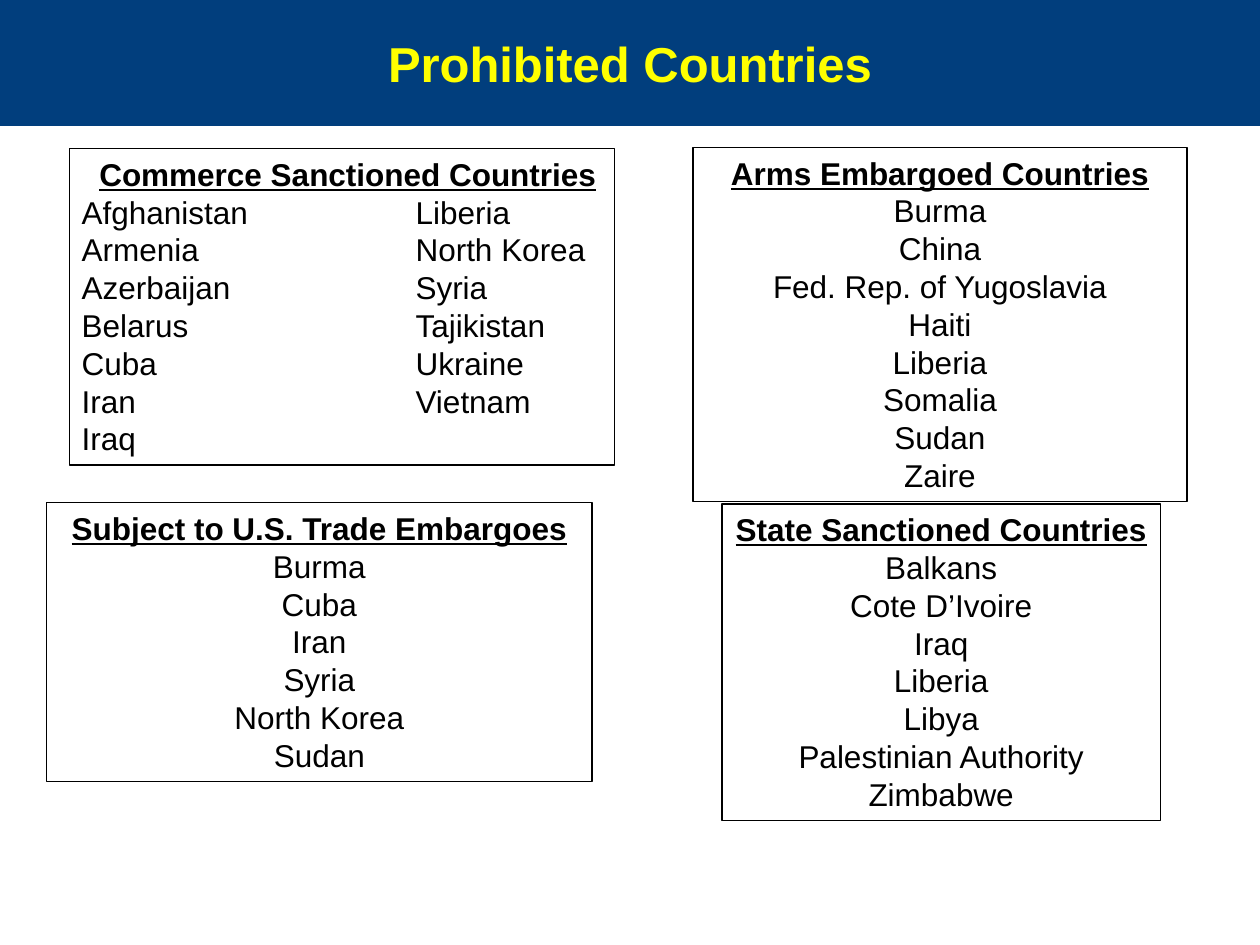
from lxml import etree
from pptx import Presentation
from pptx import util as u
from pptx.dml.color import RGBColor
from pptx.enum import shapes, text
from pptx.oxml.ns import qn

COLS, ROWS = 100, 75
LEFT, MID = text.PP_ALIGN.LEFT, text.PP_ALIGN.CENTER


def color(code):
    return RGBColor.from_string(code)


class Deck:
    """Holds the style and the current slide; lengths are grid units."""
    face, ink, navy, gold = "Arial", "000000", "013E7D", "FFFF00"

    def __init__(self):
        self.prs = Presentation()
        self.prs.slide_width, self.prs.slide_height = u.Inches(10), u.Inches(7.5)
        self.slide = self.prs.slides.add_slide(self.prs.slide_layouts[6])

    def area(self, x, y, w, h):
        col, row = self.prs.slide_width / COLS, self.prs.slide_height / ROWS
        return [round(n) for n in (x * col, y * row, w * col, h * row)]

    def style(self, par, size, tone, align=MID, bold=False, line=False):
        par.alignment = align
        font = par.font
        font.name, font.size, font.bold = self.face, u.Pt(size), bold
        font.underline = line
        font.color.rgb = color(tone)

    def band(self, title, h):
        bar = self.slide.shapes.add_shape(
            shapes.MSO_SHAPE.RECTANGLE, *self.area(0, 0, COLS, h))
        bar.shadow.inherit = False
        bar.fill.solid()
        bar.fill.fore_color.rgb = color(self.navy)
        bar.line.fill.background()
        frame = bar.text_frame
        frame.vertical_anchor = text.MSO_ANCHOR.MIDDLE
        frame.text = title
        self.style(frame.paragraphs[0], 28, self.gold, bold=True)

    def tab(self, par, pos):
        stops = etree.SubElement(par._p.get_or_add_pPr(), qn("a:tabLst"))
        etree.SubElement(stops, qn("a:tab"), pos=str(u.Inches(pos)), algn="l")

    def panel(self, spot, head, names, align=MID, stop=None, indent=0, wrap=True):
        box = self.slide.shapes.add_textbox(*self.area(*spot))
        box.line.color.rgb = color(self.ink)
        box.line.width = u.Pt(0.75)
        frame = box.text_frame
        frame.word_wrap = wrap
        frame.auto_size = text.MSO_AUTO_SIZE.SHAPE_TO_FIT_TEXT
        frame.text = "\n".join([head] + names)
        for i, par in enumerate(frame.paragraphs):
            top = i == 0
            if top and indent:
                par._p.get_or_add_pPr().set("marL", str(u.Inches(indent)))
            if stop and not top:
                self.tab(par, stop)
            self.style(par, 18, self.ink, align, bold=top, line=top)


def main():
    deck = Deck()
    deck.band("Prohibited Countries", 10)

    # Upper row
    deck.panel((5.5, 11.8, 43.3, 25.1), "Commerce Sanctioned Countries",
               ["Afghanistan\tLiberia", "Armenia\tNorth Korea",
                "Azerbaijan\tSyria", "Belarus\tTajikistan",
                "Cuba\tUkraine", "Iran\tVietnam", "Iraq"],
               align=LEFT, stop=2.65, indent=0.14)
    deck.panel((55, 11.7, 39.2, 28.1), "Arms Embargoed Countries",
               ["Burma", "China", "Fed. Rep. of Yugoslavia", "Haiti",
                "Liberia", "Somalia", "Sudan", "Zaire"])

    # Lower row
    deck.panel((3.7, 39.9, 43.3, 22.1), "Subject to U.S. Trade Embargoes",
               ["Burma", "Cuba", "Iran", "Syria", "North Korea", "Sudan"])
    deck.panel((57.3, 40, 34.8, 25.1), "State Sanctioned Countries",
               ["Balkans", "Cote D’Ivoire", "Iraq", "Liberia", "Libya",
                "Palestinian Authority", "Zimbabwe"], wrap=False)

    deck.prs.save("out.pptx")


if __name__ == "__main__":
    main()
